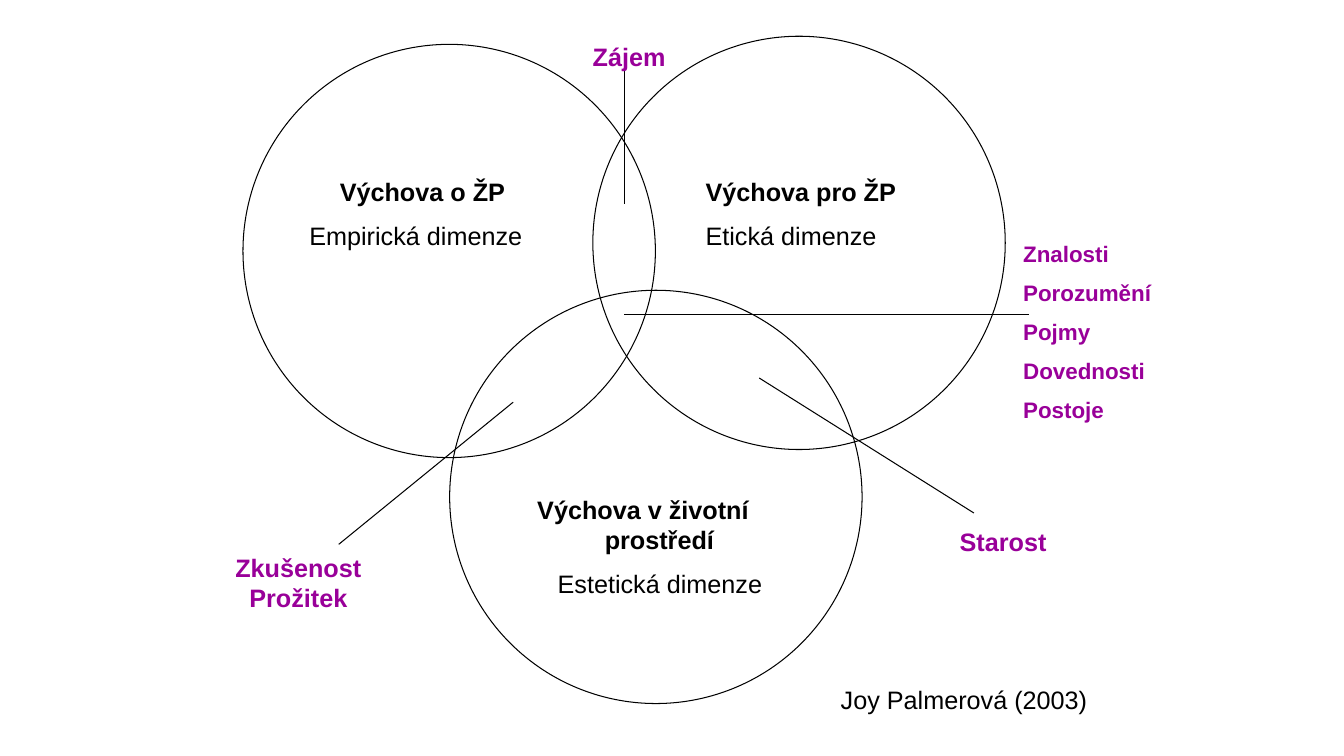
from pptx import Presentation
from pptx.dml.color import RGBColor
from pptx.enum.shapes import MSO_CONNECTOR, MSO_SHAPE
from pptx.enum.text import PP_ALIGN
from pptx.oxml.ns import qn
from pptx.util import Inches, Pt
from lxml.etree import SubElement

BLACK = RGBColor(0x00, 0x00, 0x00)
PURPLE = RGBColor(0x99, 0x00, 0x99)
LEFT, CENTER = PP_ALIGN.LEFT, PP_ALIGN.CENTER
FONT = "Arial"
THIN = Pt(0.75)
GAP = 0.55

CIRCLE_SIZE = (4.09, 4.1)
CIRCLES = [(2.41, 0.44), (5.88, 0.36), (4.46, 2.88)]

# (text, bold, alignment, left margin, first-line indent)
DIMENSIONS = [
    ((2.97, 1.7, 2.44, 1.16), [("Výchova o ŽP", True, CENTER, 0, 0),
                               ("Empirická dimenze", False, LEFT, 0, 0)]),
    ((6.9, 1.7, 2.6, 0.85), [("Výchova pro ŽP", True, LEFT, 0, 0),
                             ("Etická dimenze", False, LEFT, 0, 0)]),
    ((5.09, 4.85, 2.91, 1.15), [("Výchova v životní prostředí", True, LEFT, 0.81, -0.67),
                                ("Estetická dimenze", False, CENTER, 0, 0)]),
]
AUTHOR = ((8.24, 6.74, 3.07, 0.4), [("Joy Palmerová (2003)", False, LEFT, 0, 0)])

POINTERS = [
    ((7.53, 3.75), (9.66, 5.09)),
    ((5.09, 3.99), (3.36, 5.4)),
    ((6.19, 2.02), (6.19, 0.68)),
    ((6.19, 3.12), (10.21, 3.12)),
]

WORRY = ((9.42, 5.17, 2.24, 0.4), [("Starost", True, LEFT, 0, 0)])
INTEREST = ((5.64, 0.36, 1.42, 0.4), [("Zájem", True, LEFT, 0.14, 0)])
EXPERIENCE = ((2.16, 5.43, 1.6, 0.7), [(word, True, CENTER, 0, 0)
                                      for word in ("Zkušenost", "Prožitek")])
OUTCOMES = ((10.05, 2.33, 1.61, 1.97), [
    (word, True, LEFT, 0, 0)
    for word in ("Znalosti", "Porozumění", "Pojmy", "Dovednosti", "Postoje")])


def add_circle(slide, corner):
    circle = slide.shapes.add_shape(
        MSO_SHAPE.OVAL, *map(Inches, corner + CIRCLE_SIZE))
    circle.shadow.inherit = False
    circle.fill.background()
    circle.line.color.rgb = BLACK
    circle.line.width = THIN


def add_pointer(slide, start, end):
    pointer = slide.shapes.add_connector(
        MSO_CONNECTOR.STRAIGHT, *map(Inches, start + end))
    pointer.line.color.rgb = BLACK
    pointer.line.width = THIN
    SubElement(pointer._element.spPr, qn("a:effectLst"))


def add_label(slide, label, color, size=18, gap=GAP):
    place, lines = label
    frame = slide.shapes.add_textbox(*map(Inches, place)).text_frame
    frame.word_wrap = True
    for number, (text, bold, align, margin, indent) in enumerate(lines):
        paragraph = frame.add_paragraph() if number else frame.paragraphs[0]
        paragraph.alignment = align
        if number:
            paragraph.space_before = Pt(size * gap)
        if margin:
            properties = paragraph._p.get_or_add_pPr()
            properties.set("marL", str(Inches(margin)))
            properties.set("indent", str(Inches(indent)))
        run = paragraph.add_run()
        run.text = text
        run.font.name = FONT
        run.font.size = Pt(size)
        run.font.bold = bold
        run.font.color.rgb = color


def main():
    deck = Presentation()
    deck.slide_width, deck.slide_height = Inches(13.33), Inches(7.5)
    slide = deck.slides.add_slide(deck.slide_layouts[6])
    for corner in CIRCLES:
        add_circle(slide, corner)
    for label in DIMENSIONS + [AUTHOR]:
        add_label(slide, label, BLACK)
    for start, end in POINTERS:
        add_pointer(slide, start, end)
    add_label(slide, WORRY, PURPLE)
    add_label(slide, OUTCOMES, PURPLE, size=16)
    add_label(slide, EXPERIENCE, PURPLE, gap=0)
    add_label(slide, INTEREST, PURPLE)
    deck.save("out.pptx")


if __name__ == "__main__":
    main()
